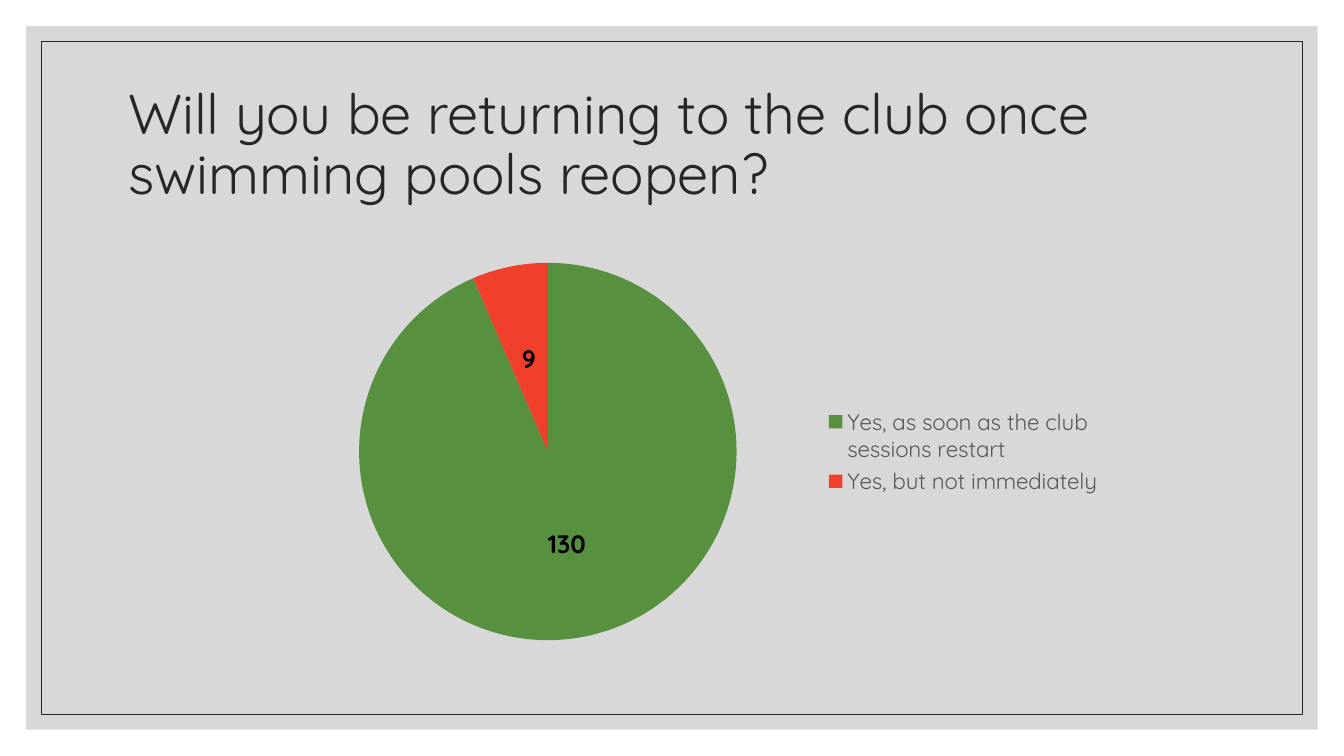
from lxml import etree
from pptx import Presentation
from pptx.chart.data import CategoryChartData
from pptx.dml.color import RGBColor
from pptx.enum.chart import XL_CHART_TYPE, XL_LABEL_POSITION, XL_LEGEND_POSITION
from pptx.enum.shapes import MSO_SHAPE
from pptx.enum.text import MSO_ANCHOR, MSO_AUTO_SIZE, PP_ALIGN
from pptx.oxml.ns import qn
from pptx.util import Inches, Pt

PIE = XL_CHART_TYPE.PIE
LABEL_CENTER = XL_LABEL_POSITION.CENTER
LEGEND_RIGHT = XL_LEGEND_POSITION.RIGHT
RECTANGLE = MSO_SHAPE.RECTANGLE
MIDDLE = MSO_ANCHOR.MIDDLE
NO_AUTOFIT = MSO_AUTO_SIZE.NONE
LEFT = PP_ALIGN.LEFT

TITLE_ONLY_LAYOUT = 5
SLIDE_WIDTH, SLIDE_HEIGHT = 13.33, 7.5
FONT = "Quicksand"
COLORS = {
    "panel": "BFBFBF",
    "ink": "262626",
    "legend": "595959",
    "label": "000000",
    "soon": "57903F",
    "later": "F03F2B",
}
ANSWERS = [
    ("Yes, as soon as the club sessions restart", 130, "soon"),
    ("Yes, but not immediately", 9, "later"),
]


def color(name):
    return RGBColor.from_string(COLORS[name])


def format_font(font, size, color_name, bold=False):
    values = {"name": FONT, "size": Pt(size), "bold": bold}
    for attribute, value in values.items():
        setattr(font, attribute, value)
    font.color.rgb = color(color_name)


def add_inset_rectangle(slide, inset):
    """Add a rectangle at an equal distance from all slide edges."""
    box = slide.shapes.add_shape(
        RECTANGLE, Inches(inset), Inches(inset),
        Inches(SLIDE_WIDTH - 2 * inset), Inches(SLIDE_HEIGHT - 2 * inset))
    box.shadow.inherit = False
    return box


def add_backdrop(slide):
    panel = add_inset_rectangle(slide, 0.26)
    panel.fill.solid()
    panel.fill.fore_color.rgb = color("panel")
    panel.line.fill.background()
    fill_color = panel.fill._xPr.find(".//" + qn("a:srgbClr"))
    etree.SubElement(fill_color, qn("a:alpha"), val="60000")

    border = add_inset_rectangle(slide, 0.41)
    border.fill.background()
    border.line.color.rgb = color("ink")
    border.line.width = Pt(0.5)


def place_title(slide, text, left, top, width, height):
    title = slide.shapes.title
    place = {"left": left, "top": top, "width": width, "height": height}
    for attribute, value in place.items():
        setattr(title, attribute, Inches(value))
    frame = title.text_frame
    frame.text = text
    frame.word_wrap = True
    frame.auto_size = NO_AUTOFIT
    frame.vertical_anchor = MIDDLE
    para = frame.paragraphs[0]
    para.alignment = LEFT
    para.line_spacing = 0.9
    format_font(para.runs[0].font, 40, "ink")
    # Bring the title in front of the backdrop
    title._element.getparent().append(title._element)


def make_layout(inner, **fractions):
    """Return a chart layout element with x, y, w and h as chart fractions."""
    layout = etree.Element(qn("c:layout"))
    manual = etree.SubElement(layout, qn("c:manualLayout"))
    if inner:
        etree.SubElement(manual, qn("c:layoutTarget"), val="inner")
    for side in "xy":
        etree.SubElement(manual, qn(f"c:{side}Mode"), val="edge")
    for key, value in fractions.items():
        etree.SubElement(manual, qn(f"c:{key}"), val=str(value))
    return layout


def remove_layout(element):
    for layout in element.findall(qn("c:layout")):
        element.remove(layout)


def add_answer_pie(slide, left, top, width, height):
    data = CategoryChartData()
    data.categories = [answer for answer, _, _ in ANSWERS]
    data.add_series("Series 1", [count for _, count, _ in ANSWERS])
    chart = slide.shapes.add_chart(
        PIE, Inches(left), Inches(top), Inches(width), Inches(height), data).chart
    chart.has_title = False
    format_font(chart.font, 10, "label")

    plot = chart.plots[0]
    plot.vary_by_categories = True
    for index, (_, _, color_name) in enumerate(ANSWERS):
        part = plot.series[0].points[index].format
        part.fill.solid()
        part.fill.fore_color.rgb = color(color_name)
        part.line.fill.background()

    labels = plot.series[0].data_labels
    labels.show_value = True
    labels.show_percentage = False
    labels.position = LABEL_CENTER
    format_font(labels.font, 18, "label", bold=True)

    chart.has_legend = True
    legend = chart.legend
    legend.position = LEGEND_RIGHT
    legend.include_in_layout = False
    format_font(legend.font, 16, "legend")

    plot_area = chart._chartSpace.find(".//" + qn("c:plotArea"))
    remove_layout(plot_area)
    plot_area.insert(0, make_layout(True, x=0.1, y=0.03, w=0.45, h=0.94))
    remove_layout(legend._element)
    legend._element.find(qn("c:overlay")).addprevious(
        make_layout(False, x=0.65, y=0.38, w=0.34, h=0.24))


def main():
    deck = Presentation()
    deck.slide_width = Inches(SLIDE_WIDTH)
    deck.slide_height = Inches(SLIDE_HEIGHT)
    slide = deck.slides.add_slide(deck.slide_layouts[TITLE_ONLY_LAYOUT])
    add_backdrop(slide)
    place_title(
        slide, "Will you be returning to the club once swimming pools reopen?",
        1.17, 0.7, 11, 1.5)
    add_answer_pie(slide, 2.73, 2.48, 8.32, 4)
    deck.save("out.pptx")


if __name__ == "__main__":
    main()
